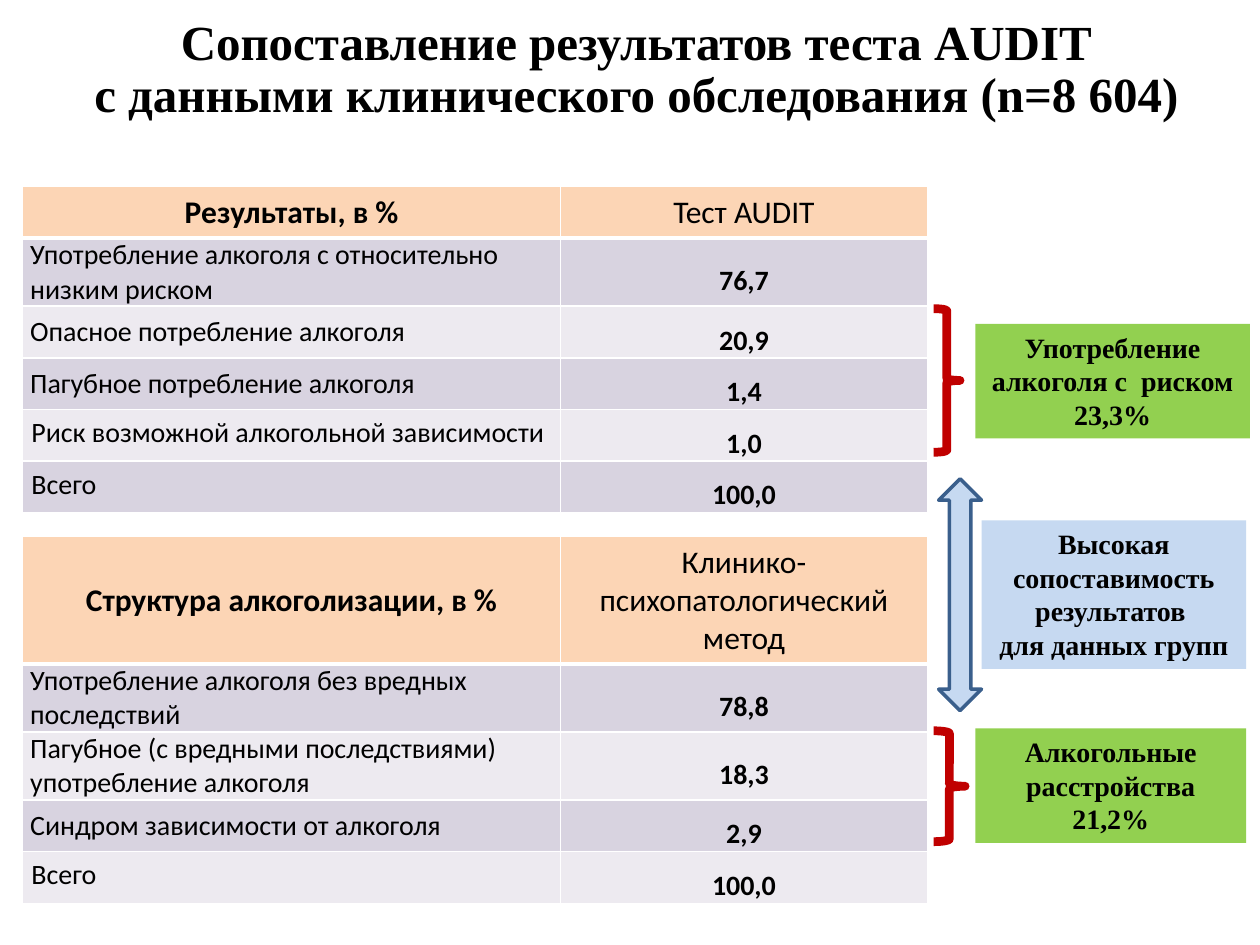
import dataclasses

import lxml.etree
import pptx
import pptx.dml.color
import pptx.enum.shapes
import pptx.enum.text
import pptx.oxml.ns
import pptx.util

SHAPES = pptx.enum.shapes.MSO_SHAPE
ANCHOR = pptx.enum.text.MSO_ANCHOR
ALIGN = pptx.enum.text.PP_ALIGN
CELL = pptx.util.Inches(0.1)  # the slide is a grid of 100 columns by 75 rows
COLUMNS, ROWS = 100, 75


@dataclasses.dataclass(frozen=True)
class Theme:
    serif: str = "Times New Roman"
    sans: str = "Calibri"
    title_size: int = 28
    header_size: int = 18
    body_size: int = 16
    text: str = "000000"
    border: str = "FFFFFF"
    header: str = "FCD5B5"
    bands: tuple = ("D8D3E0", "EDEAF0")
    brace: str = "C00000"
    group: str = "92D050"
    match: str = "C6D9F1"
    match_line: str = "3A5F8C"


THEME = Theme()


def grid(*units):
    return [round(unit * CELL) for unit in units]


def color(value):
    return pptx.dml.color.RGBColor.from_string(value)


def add_element(parent, tag, **attributes):
    element = lxml.etree.SubElement(parent, pptx.oxml.ns.qn(tag))
    for name, value in attributes.items():
        element.set(name, str(value))
    return element


def write(text_frame, text, font, size, bold=True, align=ALIGN.CENTER, spacing=None):
    text_frame.text = text
    for paragraph in text_frame.paragraphs:
        paragraph.alignment = align
        if spacing:
            paragraph.line_spacing = spacing
        for run in paragraph.runs:
            run.font.name = font
            run.font.size = pptx.util.Pt(size)
            run.font.bold = bold
            run.font.color.rgb = color(THEME.text)


def add_text_shadow(run):
    effects = add_element(run.font.fill._xPr, "a:effectLst")
    # The effects belong between the fill and the typeface.
    run.font.fill._xPr.find(pptx.oxml.ns.qn("a:solidFill")).addnext(effects)
    shadow = add_element(effects, "a:outerShdw", blurRad=38100, dist=25400,
                         dir=2700000, algn="tl", rotWithShape=0)
    shade = add_element(shadow, "a:srgbClr", val=THEME.text)
    add_element(shade, "a:alpha", val=50000)


def add_title(slide, text, bounds):
    text_frame = slide.shapes.add_textbox(*grid(*bounds)).text_frame
    text_frame.word_wrap = True
    text_frame.vertical_anchor = ANCHOR.MIDDLE
    write(text_frame, text, THEME.serif, THEME.title_size, spacing=0.9)
    for paragraph in text_frame.paragraphs:
        for run in paragraph.runs:
            add_text_shadow(run)


def add_shape(slide, kind, bounds, fill=None, line=None, width=0):
    shape = slide.shapes.add_shape(kind, *grid(*bounds))
    shape.shadow.inherit = False
    if fill:
        shape.fill.solid()
        shape.fill.fore_color.rgb = color(fill)
    else:
        shape.fill.background()
    if line:
        shape.line.color.rgb = color(line)
        shape.line.width = pptx.util.Pt(width)
    else:
        shape.line.fill.background()
    return shape


def add_label(slide, text, bounds, fill):
    text_frame = add_shape(slide, SHAPES.RECTANGLE, bounds, fill).text_frame
    text_frame.word_wrap = True
    text_frame.vertical_anchor = ANCHOR.TOP
    text_frame.auto_size = pptx.enum.text.MSO_AUTO_SIZE.SHAPE_TO_FIT_TEXT
    write(text_frame, text, THEME.serif, THEME.body_size)


def format_cell(cell, fill, padded, anchor, bottom_width=1):
    """Set borders, fill, anchor and margins; the borders come before the fill."""
    properties = cell._tc.get_or_add_tcPr()
    for tag in ("a:lnL", "a:lnR", "a:lnT", "a:lnB"):
        width = bottom_width if tag == "a:lnB" else 1
        border = add_element(properties, tag, w=pptx.util.Pt(width))
        add_element(add_element(border, "a:solidFill"), "a:srgbClr", val=THEME.border)
    cell.fill.solid()
    cell.fill.fore_color.rgb = color(fill)
    cell.vertical_anchor = anchor
    side, edge = grid(0.7, 0.5) if padded else grid(0.6, 0)
    cell.margin_left = cell.margin_right = side
    cell.margin_top = cell.margin_bottom = edge


def add_result_table(slide, top, header, results, heights, padded_rows):
    """Add a header and rows of name and value; padded rows start at the cell top."""
    widths = (42.7, 29.1)
    bounds = grid(1.8, top, sum(widths), sum(heights))
    table = slide.shapes.add_table(len(heights), len(widths), *bounds).table
    for column, width in zip(table.columns, grid(*widths)):
        column.width = width
    for row, height in zip(table.rows, grid(*heights)):
        row.height = height

    for index, text in enumerate(header):
        cell = table.cell(0, index)
        format_cell(cell, THEME.header, True, ANCHOR.MIDDLE, bottom_width=3)
        write(cell.text_frame, text, THEME.sans, THEME.header_size, bold=index == 0)

    for index, (name, value) in enumerate(results, start=1):
        fill = THEME.bands[(index - 1) % 2]
        padded = index > len(results) - padded_rows
        name_cell, value_cell = table.cell(index, 0), table.cell(index, 1)
        format_cell(name_cell, fill, padded, ANCHOR.TOP if padded else ANCHOR.MIDDLE)
        write(name_cell.text_frame, name, THEME.sans, THEME.body_size,
              bold=False, align=ALIGN.LEFT)
        format_cell(value_cell, fill, False, ANCHOR.MIDDLE)
        write(value_cell.text_frame, value, THEME.sans, THEME.body_size, spacing=1.5)


def add_group(slide, text, brace_bounds, label_bounds):
    add_shape(slide, SHAPES.RIGHT_BRACE, brace_bounds, line=THEME.brace, width=5)
    add_label(slide, text, label_bounds, THEME.group)


def main():
    presentation = pptx.Presentation()
    presentation.slide_width, presentation.slide_height = grid(COLUMNS, ROWS)
    slide = presentation.slides.add_slide(presentation.slide_layouts[6])

    add_title(slide, "Сопоставление результатов теста AUDIT\n"
                     "с данными клинического обследования (n=8 604)", (2, 1.2, 97, 8.8))

    add_result_table(
        slide, 42.6,
        ("Структура алкоголизации, в %", "Клинико-психопатологический метод"),
        [("Употребление алкоголя без вредных последствий", "78,8"),
         ("Пагубное (с вредными последствиями) употребление алкоголя", "18,3"),
         ("Синдром зависимости от алкоголя", "2,9"),
         ("Всего", "100,0")],
        (10.1, 5.4, 5.4, 4.1, 4.1), padded_rows=1)
    add_group(slide, "Алкогольные расстройства\n21,2%",
              (74.1, 58, 2.5, 8.8), (77.4, 57.8, 21.5, 9.1))

    add_result_table(
        slide, 14.8,
        ("Результаты, в %", "Тест AUDIT"),
        [("Употребление алкоголя с относительно низким риском", "76,7"),
         ("Опасное потребление алкоголя", "20,9"),
         ("Пагубное потребление алкоголя", "1,4"),
         ("Риск возможной алкогольной зависимости", "1,0"),
         ("Всего", "100,0")],
        (4.1, 5.4, 4.1, 4.1, 4.1, 4.1), padded_rows=2)
    add_group(slide, "Употребление алкоголя с  риском\n23,3%",
              (74.1, 24.5, 2.1, 11.4), (77.4, 25.7, 21.8, 9.1))

    add_shape(slide, SHAPES.UP_DOWN_ARROW, (74.5, 38, 3.4, 18.4),
              THEME.match, THEME.match_line, 2)
    add_label(slide, "Высокая сопоставимость\nрезультатов \nдля данных групп",
              (77.9, 41.3, 21, 11.8), THEME.match)

    presentation.save("out.pptx")


if __name__ == "__main__":
    main()
